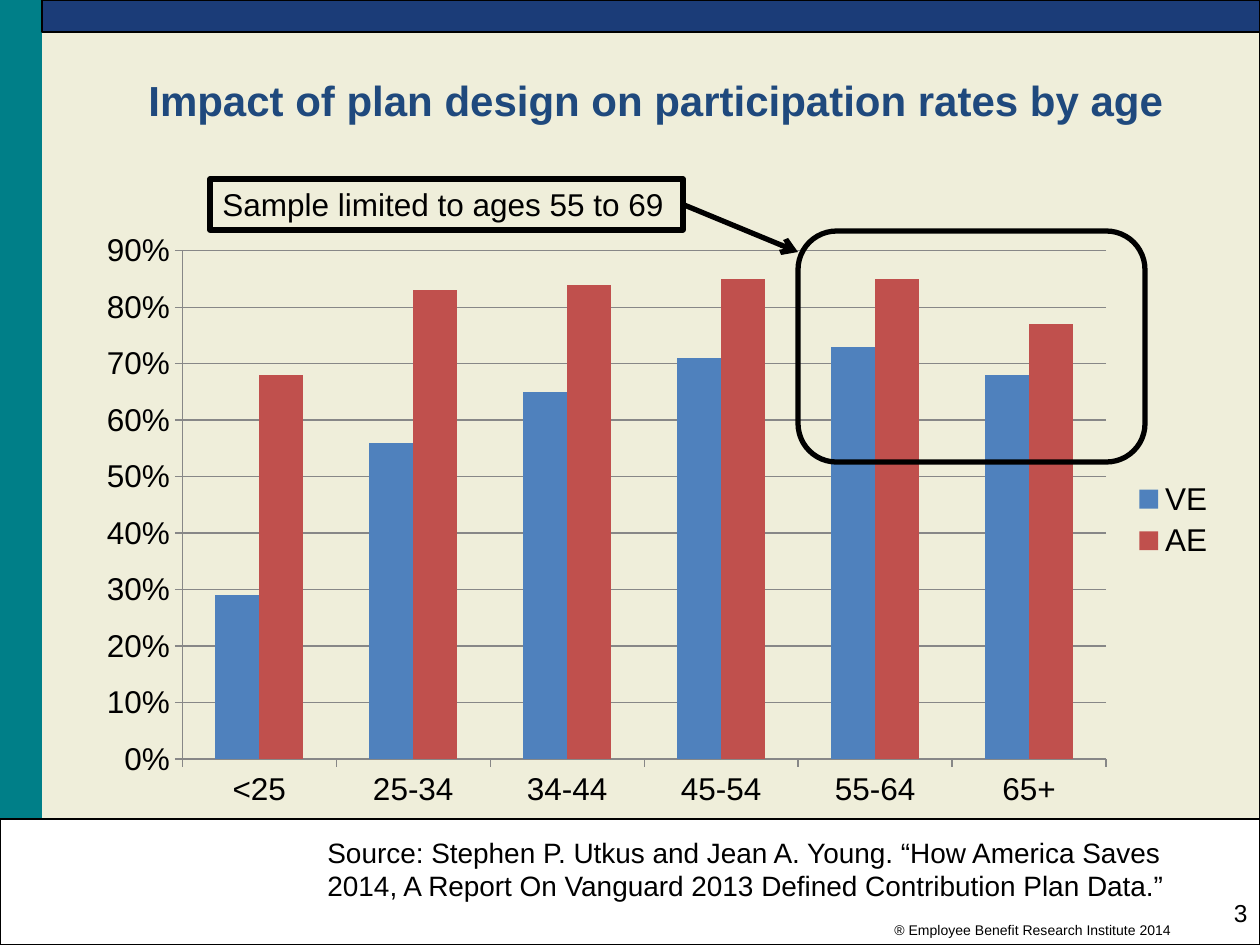
from dataclasses import dataclass

from lxml import etree
from pptx import Presentation
from pptx.chart.data import CategoryChartData
from pptx.dml.color import RGBColor
from pptx.enum.chart import XL_CHART_TYPE, XL_LEGEND_POSITION, XL_TICK_MARK
from pptx.enum.shapes import MSO_CONNECTOR, MSO_SHAPE
from pptx.enum.text import MSO_ANCHOR, PP_ALIGN
from pptx.oxml.ns import qn
from pptx.util import Emu, Pt

RECT, ROUNDED = MSO_SHAPE.RECTANGLE, MSO_SHAPE.ROUNDED_RECTANGLE
LEFT, CENTER, RIGHT = PP_ALIGN.LEFT, PP_ALIGN.CENTER, PP_ALIGN.RIGHT
TOP, MIDDLE = MSO_ANCHOR.TOP, MSO_ANCHOR.MIDDLE
PX_PER_INCH = 126
PAGE_W, PAGE_H = 1260, 945


@dataclass(frozen=True)
class Theme:
    font: str = "Arial"
    ink: str = "000000"
    paper: str = "EFEEDA"
    white: str = "FFFFFF"
    teal: str = "007F88"
    navy: str = "1B3C78"
    title: str = "1F497D"
    grid: str = "878787"
    series: tuple = ("4F81BD", "C0504D")
    title_size: int = 24
    body_size: int = 18
    source_size: int = 16
    number_size: int = 14
    credit_size: int = 8
    thin: float = 0.75
    thick: float = 3


THEME = Theme()
AGES = ("<25", "25-34", "34-44", "45-54", "55-64", "65+")
RATES = {
    "VE": (0.29, 0.56, 0.65, 0.71, 0.73, 0.68),
    "AE": (0.68, 0.83, 0.84, 0.85, 0.85, 0.77),
}


def px(*lengths):
    return [Emu(round(n * 914400 / PX_PER_INCH)) for n in lengths]


def rgb(value):
    return RGBColor.from_string(value)


def style_line(line, color, width):
    line.color.rgb = rgb(color)
    line.width = Pt(width)


def write(shape, text, size, color=THEME.ink, bold=False, align=LEFT, anchor=TOP, wrap=True):
    frame = shape.text_frame
    frame.word_wrap = wrap
    frame.vertical_anchor = anchor
    para = frame.paragraphs[0]
    para.alignment = align
    span = para.add_run()
    span.text = text
    span.font.name = THEME.font
    span.font.size = Pt(size)
    span.font.bold = bold
    span.font.color.rgb = rgb(color)


def add_text(page, area, text, size, **style):
    box = page.shapes.add_textbox(*px(*area))
    write(box, text, size, **style)


def add_block(page, area, fill=None, line_width=None, kind=RECT):
    block = page.shapes.add_shape(kind, *px(*area))
    block.shadow.inherit = False
    if fill:
        block.fill.solid()
        block.fill.fore_color.rgb = rgb(fill)
    else:
        block.fill.background()
    if line_width:
        style_line(block.line, THEME.ink, line_width)
    else:
        block.line.fill.background()
    return block


def add_arrow(page, source, end):
    """Arrow from the right side of a block to a point."""
    arrow = page.shapes.add_connector(MSO_CONNECTOR.STRAIGHT, 0, 0, *px(*end))
    arrow.begin_connect(source, 3)
    style_line(arrow.line, THEME.ink, THEME.thick)
    etree.SubElement(arrow.line._get_or_add_ln(), qn("a:tailEnd"), type="arrow")
    etree.SubElement(arrow._element.spPr, qn("a:effectLst"))


def add_rate_chart(page, area):
    data = CategoryChartData(number_format="0%")
    data.categories = AGES
    for name, values in RATES.items():
        data.add_series(name, values)
    chart = page.shapes.add_chart(XL_CHART_TYPE.COLUMN_CLUSTERED, *px(*area), data).chart
    chart.has_title = False
    chart.font.name = THEME.font
    chart.font.size = Pt(THEME.body_size)
    chart.font.color.rgb = rgb(THEME.ink)
    chart.has_legend = True
    chart.legend.position = XL_LEGEND_POSITION.RIGHT
    chart.legend.include_in_layout = False

    plot = chart.plots[0]
    plot.gap_width = 150
    plot.overlap = 0
    plot.vary_by_categories = False
    for series, color in zip(plot.series, THEME.series):
        series.format.fill.solid()
        series.format.fill.fore_color.rgb = rgb(color)

    rates = chart.value_axis
    for axis in (chart.category_axis, rates):
        axis.major_tick_mark = XL_TICK_MARK.OUTSIDE
        axis.minor_tick_mark = XL_TICK_MARK.NONE
        style_line(axis.format.line, THEME.grid, THEME.thin)
    rates.minimum_scale, rates.maximum_scale, rates.major_unit = 0, 0.9, 0.1
    rates.tick_labels.number_format = "0%"
    rates.tick_labels.number_format_is_linked = False
    rates.has_major_gridlines = True
    style_line(rates.major_gridlines.format.line, THEME.grid, THEME.thin)


def main():
    deck = Presentation()
    deck.slide_width, deck.slide_height = px(PAGE_W, PAGE_H)
    page = deck.slides.add_slide(deck.slide_layouts[6])

    # Backdrop: paper, side band, footer and top band
    add_block(page, (0, 0, PAGE_W, PAGE_H), THEME.paper, THEME.thin)
    add_block(page, (0, 0, 42, PAGE_H), THEME.teal)
    add_block(page, (0, 819, PAGE_W, 126), THEME.white, THEME.thin)
    add_block(page, (42, 0, PAGE_W - 42, 32), THEME.navy, THEME.thin)

    # Title and chart
    add_text(page, (84, 42, 1144, 116), "Impact of plan design on participation rates by age",
             THEME.title_size, color=THEME.title, bold=True, align=CENTER, anchor=MIDDLE)
    add_rate_chart(page, (84, 221, 1144, 598))

    # Footer
    add_text(page, (882, 915, 306, 30), "® Employee Benefit Research Institute 2014",
             THEME.credit_size, wrap=False)
    add_text(page, (1207, 892, 53, 53), "3", THEME.number_size, align=RIGHT)
    add_text(page, (315, 829, 903, 81),
             "Source: Stephen P. Utkus and Jean A. Young. “How America Saves 2014, "
             "A Report On Vanguard 2013 Defined Contribution Plan Data.”", THEME.source_size)

    # Callout for the oldest groups
    add_block(page, (798, 231, 347, 231), line_width=THEME.thick, kind=ROUNDED)
    callout = add_block(page, (210, 179, 473, 51), line_width=THEME.thick)
    write(callout, "Sample limited to ages 55 to 69", THEME.body_size)
    add_arrow(page, callout, (798, 252))

    deck.save("out.pptx")


if __name__ == "__main__":
    main()
